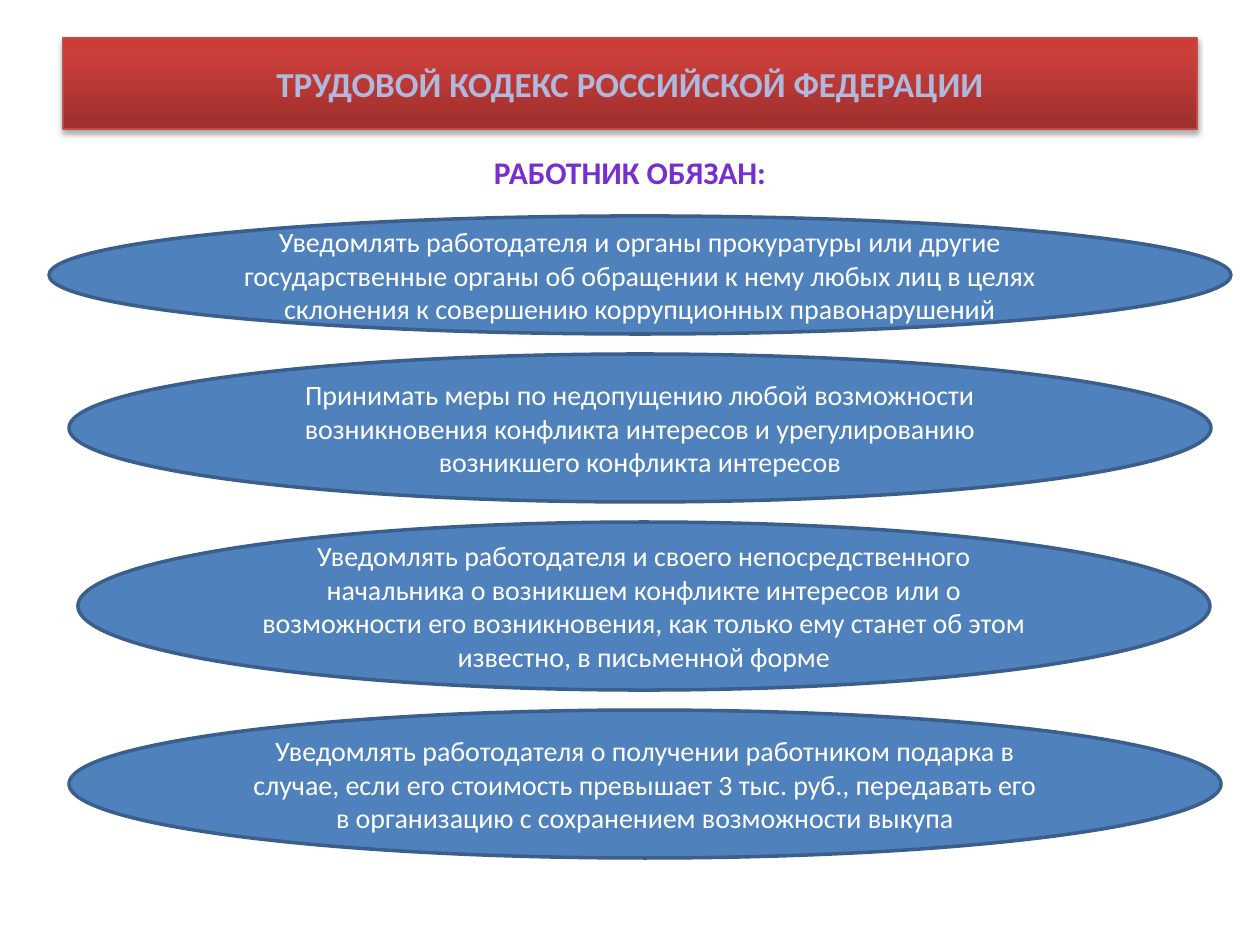
from dataclasses import dataclass

from lxml.etree import SubElement
from pptx import Presentation
from pptx.dml.color import RGBColor
from pptx.enum.shapes import MSO_SHAPE as Preset
from pptx.enum.text import MSO_ANCHOR as Anchor, PP_ALIGN as Align
from pptx.oxml import parse_xml
from pptx.oxml.ns import nsdecls, qn
from pptx.util import Emu, Pt

PX_PER_INCH = 126
FONT = "Calibri"
FIRST_TOP = 216
GAP = 20
COLORS = {
    "title_text": "AFB9DD",
    "title_line": "BF4C48",
    "subtitle": "7730CE",
    "ellipse": "4F81BD",
    "ellipse_line": "3A5F8C",
    "white": "FFFFFF",
}
BANNER_STOPS = {0: "9C2F2D", 80: "CB3E3A", 100: "CE3B37"}


@dataclass(frozen=True)
class Duty:
    left: int
    width: int
    height: int
    text: str


DUTIES = [
    Duty(49, 1182, 118, "Уведомлять работодателя и органы прокуратуры или другие государственные органы "
         "об обращении к нему любых лиц в целях склонения к совершению коррупционных правонарушений"),
    Duty(69, 1142, 148, "Принимать меры по недопущению любой возможности возникновения конфликта "
         "интересов и урегулированию возникшего конфликта интересов"),
    Duty(78, 1132, 168, "Уведомлять работодателя и своего непосредственного начальника о возникшем "
         "конфликте интересов или о возможности его возникновения, как только ему станет об этом "
         "известно, в письменной форме"),
    Duty(69, 1152, 148, "Уведомлять работодателя о получении работником подарка в случае, если его "
         "стоимость превышает 3 тыс. руб., передавать его в организацию с сохранением возможности выкупа"),
]


def px(value: int) -> Emu:
    return Emu(round(value * 914400 / PX_PER_INCH))


def rgb(name: str) -> RGBColor:
    return RGBColor.from_string(COLORS[name])


def place(shape, left: int, top: int, width: int, height: int) -> None:
    shape.left, shape.top = px(left), px(top)
    shape.width, shape.height = px(width), px(height)


def write(shape, text: str, size: int, color: str, anchor: Anchor, bold: bool = False) -> None:
    frame = shape.text_frame
    frame.text = text
    frame.word_wrap = True
    frame.vertical_anchor = anchor
    paragraph = frame.paragraphs[0]
    paragraph.alignment = Align.CENTER
    font = paragraph.runs[0].font
    font.name, font.size, font.bold = FONT, Pt(size), bold
    font.color.rgb = rgb(color)


def draw_title(shape) -> None:
    place(shape, 63, 38, 1134, 91)
    write(shape, "ТРУДОВОЙ КОДЕКС РОССИЙСКОЙ ФЕДЕРАЦИИ", 20, "title_text", Anchor.MIDDLE, True)
    stops = "".join(
        f'<a:gs pos="{position * 1000}"><a:srgbClr val="{color}"/></a:gs>'
        for position, color in BANNER_STOPS.items()
    )
    properties = shape.element.spPr
    properties.append(parse_xml(
        f'<a:gradFill {nsdecls("a")} rotWithShape="1"><a:gsLst>{stops}</a:gsLst>'
        '<a:lin ang="16200000" scaled="0"/></a:gradFill>'
    ))
    shape.line.color.rgb = rgb("title_line")
    shape.line.width = Pt(0.75)
    properties.append(parse_xml(
        f'<a:effectLst {nsdecls("a")}><a:outerShdw blurRad="40000" dist="23000" dir="5400000" '
        'rotWithShape="0"><a:srgbClr val="000000"><a:alpha val="35000"/></a:srgbClr>'
        '</a:outerShdw></a:effectLst>'
    ))


def draw_subtitle(shape) -> None:
    place(shape, 63, 147, 1134, 697)
    write(shape, "РАБОТНИК ОБЯЗАН:", 18, "subtitle", Anchor.TOP, True)
    paragraph = shape.text_frame.paragraphs[0]
    paragraph.space_before = Pt(3.6)
    properties = paragraph._p.get_or_add_pPr()
    properties.set("marL", "0")
    properties.set("indent", "0")
    SubElement(properties, qn("a:buNone"))


def draw_duty(slide, duty: Duty, top: int) -> None:
    shape = slide.shapes.add_shape(
        Preset.OVAL, px(duty.left), px(top), px(duty.width), px(duty.height)
    )
    shape.shadow.inherit = False
    shape.fill.solid()
    shape.fill.fore_color.rgb = rgb("ellipse")
    shape.line.color.rgb = rgb("ellipse_line")
    shape.line.width = Pt(2)
    write(shape, duty.text, 16, "white", Anchor.MIDDLE)


def main() -> None:
    presentation = Presentation()
    presentation.slide_width, presentation.slide_height = px(1260), px(945)
    slide = presentation.slides.add_slide(presentation.slide_layouts[1])
    draw_title(slide.shapes.title)
    draw_subtitle(slide.placeholders[1])
    top = FIRST_TOP
    for duty in DUTIES:
        draw_duty(slide, duty, top)
        top += duty.height + GAP
    presentation.save("out.pptx")


if __name__ == "__main__":
    main()
